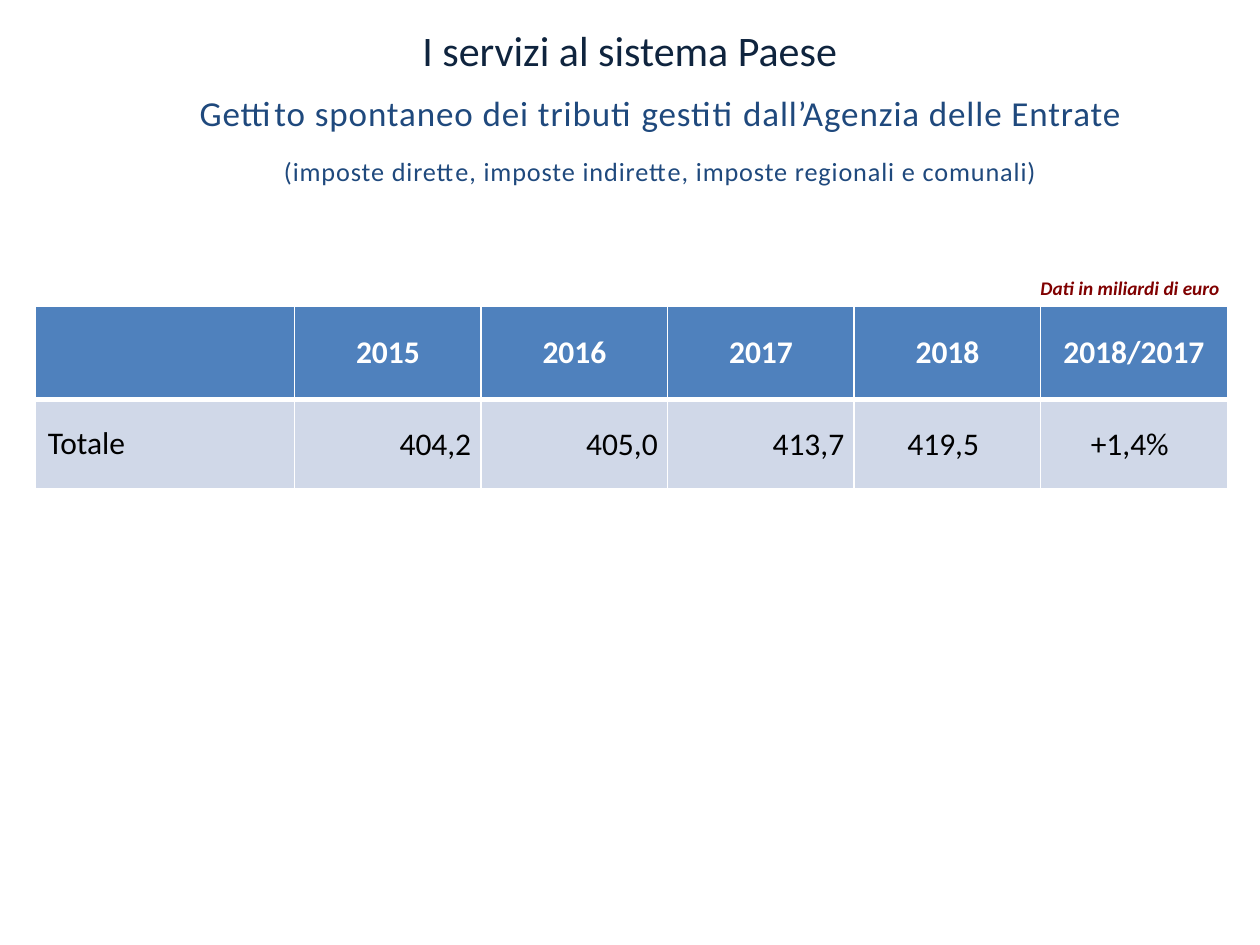
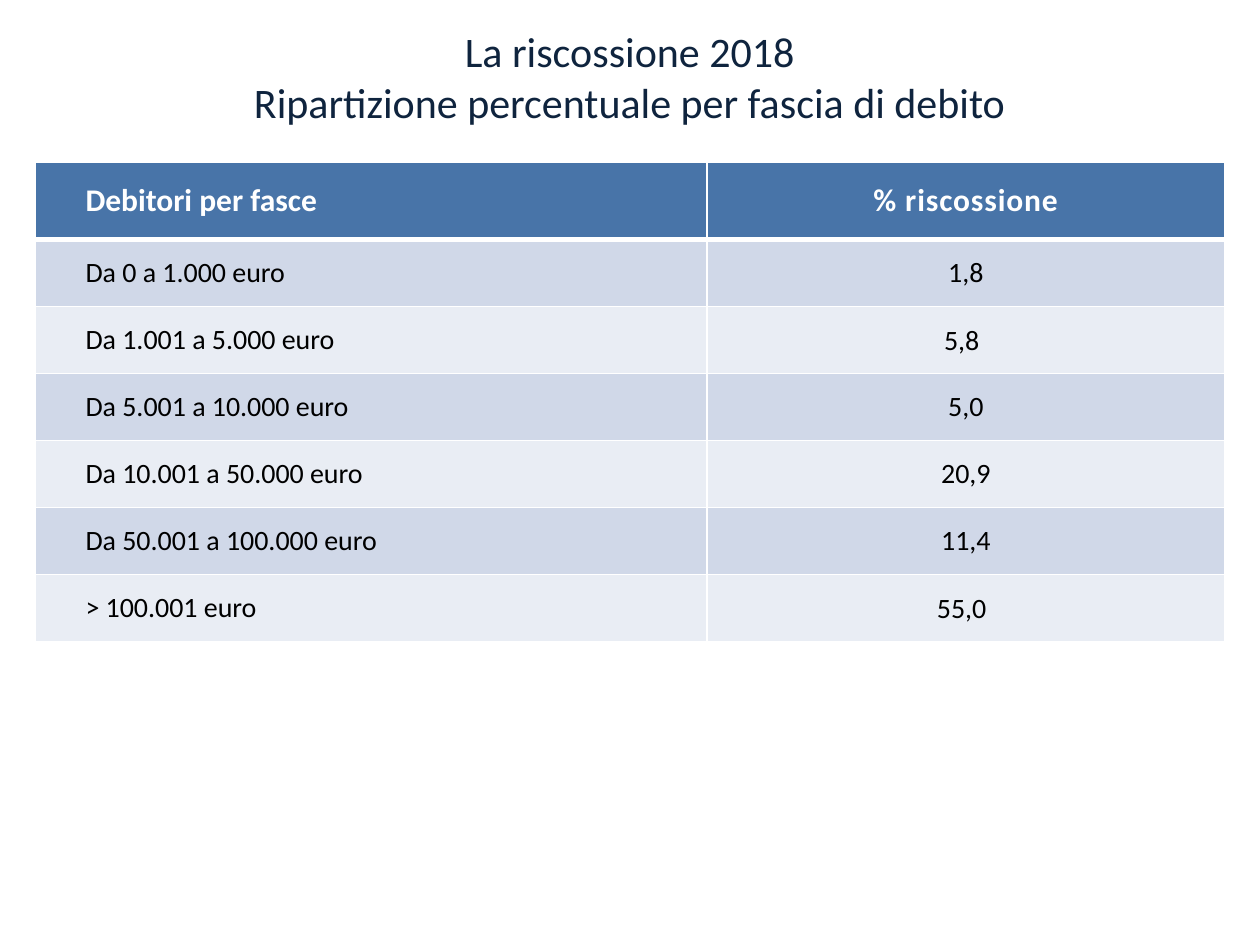
from dataclasses import dataclass

from lxml.etree import SubElement
from pptx import Presentation
from pptx.dml.color import RGBColor as Rgb
from pptx.enum.shapes import MSO_SHAPE as Shape
from pptx.enum.text import MSO_ANCHOR as Anchor, PP_ALIGN as Align
from pptx.oxml.ns import qn
from pptx.util import Cm, Pt


@dataclass(frozen=True)
class Theme:
    font: str = "Calibri"
    white: str = "FFFFFF"
    black: str = "000000"
    title: str = "0F243E"
    sub: str = "1F497D"
    note: str = "800000"
    head: str = "4F81BD"
    dark_head: str = "4874A8"
    bands: tuple = ("D0D8E8", "E9EDF4")
    title_pt: int = 24
    sub_pt: int = 20
    detail_pt: int = 15
    table_pt: int = 18
    row_pt: int = 16
    note_pt: int = 11


THEME = Theme()
LEFT = 0.71


def style(para, text, size, color, align=Align.LEFT, bold=False,
          italic=False, track=0, indent=0):
    """Fill one paragraph; track is in points, indent in centimetres."""
    run = para.add_run()
    run.text = text
    if track:
        run._r.get_or_add_rPr().set("spc", str(int(track * 100)))
    if indent:
        para._p.get_or_add_pPr().set("marL", str(Cm(indent)))
    para.alignment = align
    font = para.font
    font.name, font.size = THEME.font, Pt(size)
    font.bold, font.italic = bold, italic
    font.color.rgb = Rgb.from_string(color)


def add_title(slide, box, *lines):
    band = slide.shapes.add_shape(Shape.RECTANGLE, *map(Cm, box))
    band.shadow.inherit = False
    band.fill.solid()
    band.fill.fore_color.rgb = Rgb.from_string(THEME.white)
    band.line.fill.background()
    frame = band.text_frame
    frame.word_wrap = True
    for i, line in enumerate(lines):
        para = frame.add_paragraph() if i else frame.paragraphs[0]
        style(para, line, THEME.title_pt, THEME.title, Align.CENTER)


def add_frame(slide, box):
    frame = slide.shapes.add_textbox(*map(Cm, box)).text_frame
    frame.word_wrap = True
    return frame


def add_sub(slide, box, lead, detail):
    frame = add_frame(slide, box)
    paras = frame.paragraphs[0], frame.add_paragraph()
    sizes = THEME.sub_pt, THEME.detail_pt
    for para, text, size in zip(paras, (lead, detail), sizes):
        style(para, text, size, THEME.sub, Align.CENTER, track=0.5, indent=1.27)
        para.space_after = Pt(12)


def add_note(slide, box, text):
    style(add_frame(slide, box).paragraphs[0], text, THEME.note_pt, THEME.note,
          Align.RIGHT, bold=True, italic=True)


def add_edges(cell, base):
    """Draw white cell borders, the bottom one base points wide."""
    props = cell._tc.get_or_add_tcPr()
    for side, width in zip("LRTB", (1, 1, 1, base)):
        line = SubElement(props, qn(f"a:ln{side}"), w=str(Pt(width)))
        fill = SubElement(line, qn("a:solidFill"))
        SubElement(fill, qn("a:srgbClr"), val=THEME.white)


def paint(cell, color, base=1):
    add_edges(cell, base)
    cell.fill.solid()
    cell.fill.fore_color.rgb = Rgb.from_string(color)
    cell.vertical_anchor = Anchor.MIDDLE


def tighten(cell):
    cell.margin_left = cell.margin_top = Cm(0.03)
    cell.margin_right, cell.margin_bottom = Cm(0.2), 0


def add_grid(slide, top, cols, rows, data, head):
    """Add a table with a painted header and banded rows; return it."""
    frame = slide.shapes.add_table(len(rows), len(cols), Cm(LEFT), Cm(top),
                                   Cm(sum(cols)), Cm(sum(rows)))
    grid = frame.table
    for col, width in zip(grid.columns, cols):
        col.width = Cm(width)
    for r, (row, height) in enumerate(zip(grid.rows, rows)):
        row.height = Cm(height)
        for cell in row.cells:
            if r:
                paint(cell, THEME.bands[(r - 1) % 2])
            else:
                paint(cell, head, base=3)
    for r, texts in enumerate(data):
        for c, item in enumerate(texts):
            if item:
                text, look = item
                style(grid.cell(r, c).text_frame.paragraphs[0], text, **look)
    return grid


def add_yield(deck):
    slide = deck.slides.add_slide(deck.slide_layouts[6])
    head = dict(size=THEME.table_pt, color=THEME.white, bold=True,
                align=Align.CENTER)
    body = dict(size=THEME.table_pt, color=THEME.black)
    years = ["2015", "2016", "2017", "2018", "2018/2017"]
    sums = ["404,2", "405,0", "413,7", "419,5", "+1,4%"]
    sides = [Align.RIGHT] * 3 + [Align.CENTER] * 2
    data = [
        [None] + [(year, head) for year in years],
        [("Totale", body)] + [(total, dict(body, align=side))
                              for total, side in zip(sums, sides)],
    ]
    grid = add_grid(slide, 6.17, [5.23] + [3.76] * 5, [1.88, 1.8], data,
                    THEME.head)
    for c in range(1, 6):
        tighten(grid.cell(1, c))
    add_sub(slide, (1.09, 1.73, 23.19, 2.64),
            "Gettito spontaneo dei tributi gestiti dall’Agenzia delle Entrate",
            "(imposte dirette, imposte indirette, imposte regionali e comunali)")
    add_note(slide, (14.63, 5.44, 10.21, 0.74), "Dati in miliardi di euro")
    add_title(slide, (0.3, 0.36, 24.79, 1.27), "I servizi al sistema Paese")


def add_debts(deck):
    slide = deck.slides.add_slide(deck.slide_layouts[6])
    head = dict(size=THEME.table_pt, color=THEME.white, bold=True)
    body = dict(size=THEME.row_pt, color=THEME.black)
    left, mid = dict(indent=0.76), dict(align=Align.CENTER)
    shares = [
        ("Da 0 a 1.000 euro", "1,8"),
        ("Da 1.001 a 5.000 euro", "5,8"),
        ("Da 5.001 a 10.000 euro", "5,0"),
        ("Da 10.001 a 50.000 euro", "20,9"),
        ("Da 50.001 a 100.000 euro", "11,4"),
        ("> 100.001 euro", "55,0"),
    ]
    data = [[("Debitori per fasce", head | left),
             ("% riscossione", head | mid | dict(track=0.5))]]
    data += [[(band, body | left), (share, body | mid)]
             for band, share in shares]
    grid = add_grid(slide, 3.28, [13.54, 10.44], [1.55] + [1.35] * 6, data,
                    THEME.dark_head)
    for r in (2, 6):
        tighten(grid.cell(r, 1))
    add_title(slide, (0.58, 0.38, 24.23, 2.31), "La riscossione 2018",
              "Ripartizione percentuale per fascia di debito")


def main():
    deck = Presentation()
    deck.slide_width, deck.slide_height = Cm(25.4), Cm(19.05)
    add_yield(deck)
    add_debts(deck)
    deck.save("out.pptx")


if __name__ == "__main__":
    main()
